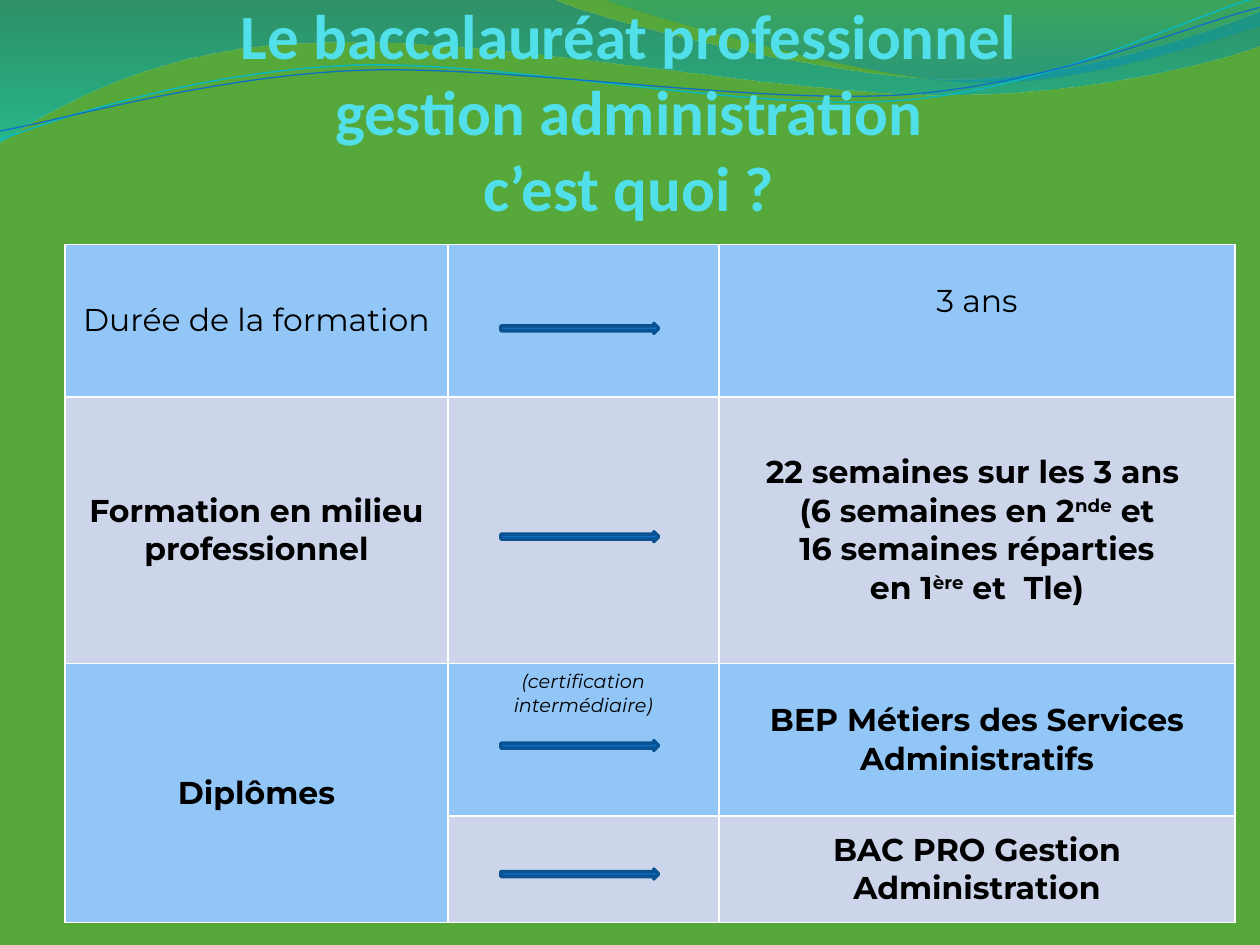
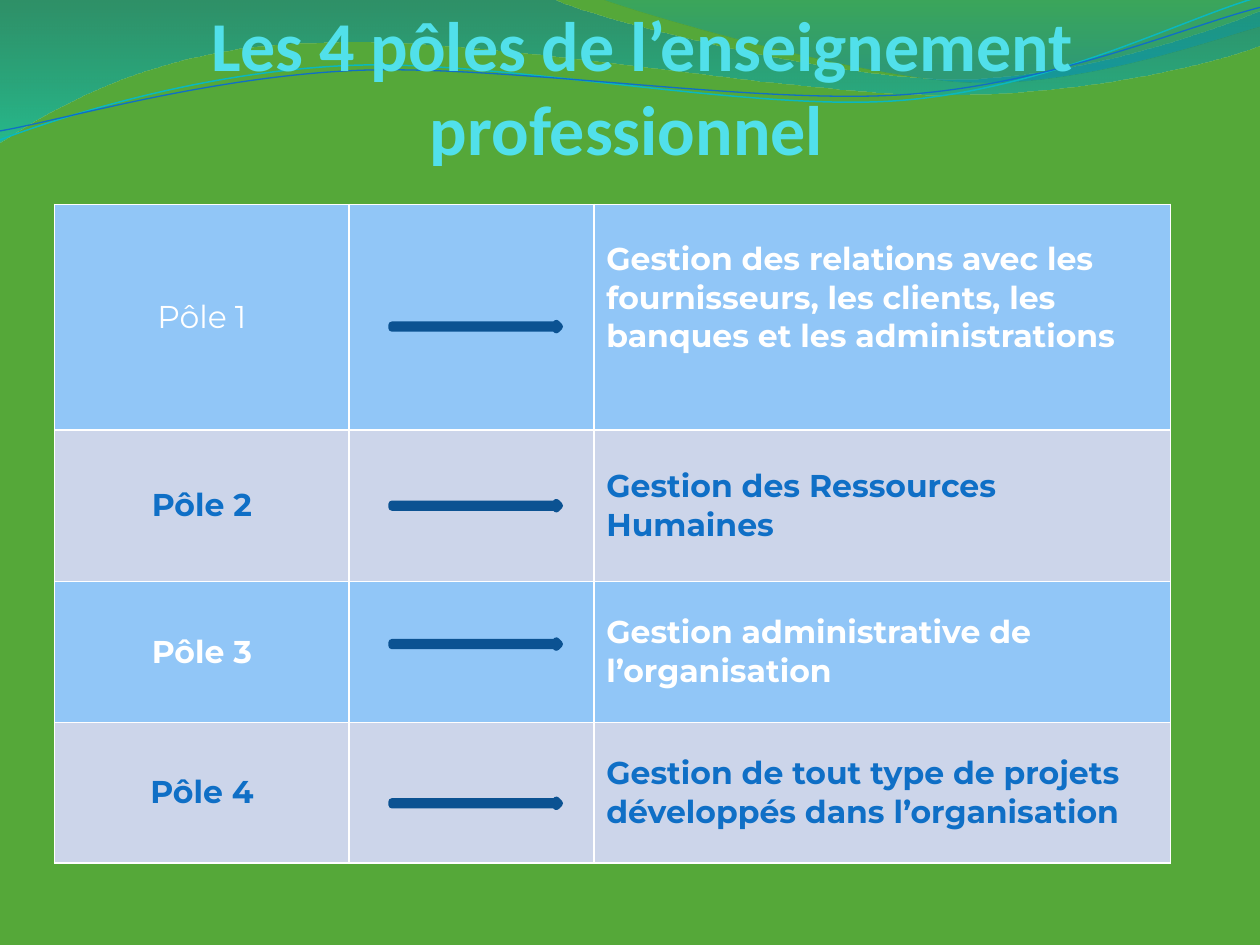
import pptx
import pptx.dml.color
import pptx.enum.shapes
import pptx.enum.text
import pptx.oxml.ns
import pptx.util
from lxml import etree

Cm = pptx.util.Cm
Pt = pptx.util.Pt
RGB = pptx.dml.color.RGBColor
Align = pptx.enum.text.PP_ALIGN
Anchor = pptx.enum.text.MSO_ANCHOR
qn = pptx.oxml.ns.qn

GREEN = RGB(0x55, 0xA8, 0x39)
TITLE_CYAN = RGB(0x51, 0xE0, 0xEA)
BLUE = RGB(0x0F, 0x6F, 0xC6)
DARK_BLUE = RGB(0x0B, 0x52, 0x92)
TEAL = RGB(0x0A, 0xB8, 0xBF)
SKY = RGB(0x91, 0xC6, 0xF7)
LAVENDER = RGB(0xCC, 0xD5, 0xEA)
BLACK = RGB(0, 0, 0)
WHITE = RGB(0xFF, 0xFF, 0xFF)

# Each wave starts at a point; a step is a line (1 point) or a curve (3 points), in cm.
# Fills list gradient stops as (position, colour, opacity in percent).
WAVES = [
    {"start": (0, 0),
     "steps": [[(11.18, 0)],
               [(12.09, 0.43), (16.87, 1.6), (19.25, 1.6)],
               [(21.67, 1.6), (24.33, 0.66), (25.4, 0.23)],
               [(25.4, 0.91)],
               [(24.97, 1.12), (22.1, 1.93), (18.95, 1.91)],
               [(15.8, 1.91), (9.7, 0.71), (6.53, 0.86)],
               [(3.28, 0.89), (1.17, 2.11), (0, 2.87)]],
     "stops": [(0, RGB(0x00, 0x74, 0xA1), 45), (1, RGB(0x00, 0xC6, 0xCF), 55)]},
    {"start": (12.17, 0),
     "steps": [[(12.93, 0.28), (17.32, 1.57), (19.53, 1.65)],
               [(21.74, 1.75), (24.41, 0.81), (25.4, 0.53)],
               [(25.4, 0)]],
     "stops": [(0, RGB(0x00, 0xA1, 0xA9), 30), (0.8, RGB(0x00, 0x8B, 0xBF), 45)]},
    {"start": (0, 2.82),
     "steps": [[(1.22, 2.36), (4.01, 1.45), (7.04, 1.32)],
               [(10.03, 1.19), (15.06, 2.26), (18.11, 2.03)],
               [(21.16, 1.8), (23.83, 0.38), (25.35, -0.05)]],
     "line": (TEAL, 0.85)},
    {"start": (0, 2.64),
     "steps": [[(1.19, 2.44), (4.17, 1.55), (7.19, 1.42)],
               [(10.24, 1.3), (15.16, 2.11), (18.21, 1.91)],
               [(21.23, 1.7), (23.9, 0.53), (25.4, 0.15)]],
     "line": (BLUE, 0.75)},
]

# Cells are (row, column, text, format); ^ marks superscript.
PAGES = [
    {"title": "Le baccalauréat professionnel\vgestion administration\vc’est quoi ?",
     "title_size": 36, "title_box": (0, 0.74, 25.4, 3.81), "title_bottom": 0.04,
     "table_at": (1.31, 4.93), "columns": [7.72, 5.46, 10.41],
     "rows": [3.07, 5.38, 3.07, 2.15], "merge": ((2, 0), (3, 0)),
     "cells": [
         (0, 0, "Durée de la formation", {"bold": False}),
         (0, 2, "3 ans", {"bold": False}),
         (1, 0, "Formation en milieu professionnel", {}),
         (1, 2, "22 semaines sur les 3 ans \n(6 semaines en 2^nde^ et\n"
                "16 semaines réparties\nen 1^ère^ et  Tle)", {}),
         (2, 0, "Diplômes", {}),
         (2, 1, "(certification intermédiaire)",
          {"size": 11, "bold": False, "italic": True, "anchor": Anchor.TOP}),
         (2, 2, "BEP Métiers des Services Administratifs", {}),
         (3, 2, "BAC PRO Gestion Administration", {})],
     "arrow_left": 10.1, "arrow_size": (3.18, 0.2), "arrow_line": 2,
     "arrow_tops": [6.52, 10.72, 14.93, 17.52]},
    {"title": " Les 4 pôles de l’enseignement professionnel ",
     "title_size": 40, "title_box": (0.71, 1.52, 24.21, 3.61), "title_bottom": 1.71,
     "table_at": (1.1, 4.12), "columns": [5.94, 4.93, 11.63],
     "rows": [4.55, 3.05, 2.84, 2.84], "merge": None,
     "cells": [],
     "arrow_left": 7.9, "arrow_size": (3.38, 0.13), "arrow_line": 4,
     "arrow_tops": [6.52, 10.13, 12.92, 16.13]},
]
POLES = [
    "Gestion des relations avec les fournisseurs, les clients, les banques et les administrations",
    "Gestion des Ressources Humaines",
    "Gestion administrative de l’organisation",
    "Gestion de tout type de projets développés dans l’organisation",
]
for row, pole in enumerate(POLES):
    color = BLUE if row % 2 else WHITE
    PAGES[1]["cells"] += [
        (row, 0, f"Pôle {row + 1}", {"color": color, "bold": row > 0}),
        (row, 2, pole, {"color": color, "align": Align.LEFT})]


def write(frame, text, *, size=18, color=BLACK, bold=True, italic=False,
          font="Montserrat", align=Align.CENTER, anchor=Anchor.MIDDLE):
    """Fill a text frame: one paragraph a line, with ^superscript^ parts."""
    frame.word_wrap = True
    frame.vertical_anchor = anchor
    for number, line in enumerate(text.split("\n")):
        para = frame.add_paragraph() if number else frame.paragraphs[0]
        para.alignment = align
        for part_number, part in enumerate(line.split("^")):
            for piece_number, piece in enumerate(part.split("\v")):
                if piece_number:
                    para.add_line_break()
                span = para.add_run()
                span.text = piece
                span.font.name = font
                span.font.size = Pt(size)
                span.font.bold = bold
                span.font.italic = italic
                span.font.color.rgb = color
                if part_number % 2:
                    span._r.get_or_add_rPr().set("baseline", "30000")


def add_wave(shapes, start, steps, closed):
    """Add a freeform through the step ends, then bend its curved steps."""
    builder = shapes.build_freeform(Cm(start[0]), Cm(start[1]))
    builder.add_line_segments([(Cm(x), Cm(y)) for *_, (x, y) in steps], close=closed)
    wave_shape = builder.convert_to_shape()
    for line, step in zip(list(wave_shape.element.iter(qn("a:lnTo"))), steps):
        if len(step) == 3:
            curve = etree.Element(qn("a:cubicBezTo"))
            for x, y in step:
                etree.SubElement(curve, qn("a:pt"), x=str(Cm(x) - wave_shape.left),
                                 y=str(Cm(y) - wave_shape.top))
            line.getparent().replace(line, curve)
    wave_shape.shadow.inherit = False
    return wave_shape


deck = pptx.Presentation()
deck.slide_width, deck.slide_height = Cm(25.4), Cm(19.05)
master = deck.slide_master
master.background.fill.solid()
master.background.fill.fore_color.rgb = GREEN
slides = [deck.slides.add_slide(deck.slide_layouts.get_by_name("Title Only")) for page in PAGES]

# The waves are drawn on a slide, then moved to the master that all slides share.
for position, wave in enumerate(WAVES, start=2):
    shape = add_wave(slides[0].shapes, wave["start"], wave["steps"], "stops" in wave)
    if "stops" in wave:
        shape.line.fill.background()
        shape.fill.gradient()
        shape.fill.gradient_angle = 270
        for stop, (place, color, opacity) in zip(shape.fill.gradient_stops, wave["stops"]):
            stop.position = place
            stop.color.rgb = color
        for tint, (place, color, opacity) in zip(shape.element.iter(qn("a:srgbClr")), wave["stops"]):
            etree.SubElement(tint, qn("a:alpha")).set("val", str(opacity * 1000))
    else:
        shape.fill.background()
        shape.line.color.rgb = wave["line"][0]
        shape.line.width = Pt(wave["line"][1])
    master.shapes.element.insert(position, shape.element)

for slide, page in zip(slides, PAGES):
    title = slide.shapes.title
    title.left, title.top, title.width, title.height = map(Cm, page["title_box"])
    frame = title.text_frame
    frame.auto_size = pptx.enum.text.MSO_AUTO_SIZE.NONE
    frame.margin_left = frame.margin_top = 0
    frame.margin_right = Cm(0.05)
    frame.margin_bottom = Cm(page["title_bottom"])
    write(frame, page["title"], size=page["title_size"], color=TITLE_CYAN,
          font="Calibri", anchor=Anchor.BOTTOM)

    widths, heights = page["columns"], page["rows"]
    table = slide.shapes.add_table(len(heights), len(widths), *map(Cm, page["table_at"]),
                                   Cm(sum(widths)), Cm(sum(heights))).table
    table.first_row = table.horz_banding = False
    for column, width in zip(table.columns, widths):
        column.width = Cm(width)
    for number, (row, height) in enumerate(zip(table.rows, heights)):
        row.height = Cm(height)
        for cell in row.cells:
            cell.fill.solid()
            cell.fill.fore_color.rgb = LAVENDER if number % 2 else SKY
            properties = cell._tc.get_or_add_tcPr()
            for order, side in enumerate(("a:lnL", "a:lnR", "a:lnT", "a:lnB")):
                border = etree.Element(qn(side), w=str(Pt(1)))
                paint = etree.SubElement(border, qn("a:solidFill"))
                etree.SubElement(paint, qn("a:srgbClr")).set("val", str(WHITE))
                properties.insert(order, border)
    if page["merge"]:
        first, last = page["merge"]
        table.cell(*first).merge(table.cell(*last))
    for row, column, text, style in page["cells"]:
        cell = table.cell(row, column)
        write(cell.text_frame, text, **style)
        cell.vertical_anchor = style.get("anchor", Anchor.MIDDLE)
    table.cell(0, 2).margin_bottom = Cm(0.9)

    for top in page["arrow_tops"]:
        arrow = slide.shapes.add_shape(pptx.enum.shapes.MSO_SHAPE.RIGHT_ARROW,
                                       Cm(page["arrow_left"]), Cm(top),
                                       *map(Cm, page["arrow_size"]))
        arrow.shadow.inherit = False
        arrow.fill.solid()
        arrow.fill.fore_color.rgb = BLUE
        arrow.line.color.rgb = DARK_BLUE
        arrow.line.width = Pt(page["arrow_line"])

deck.save("out.pptx")
